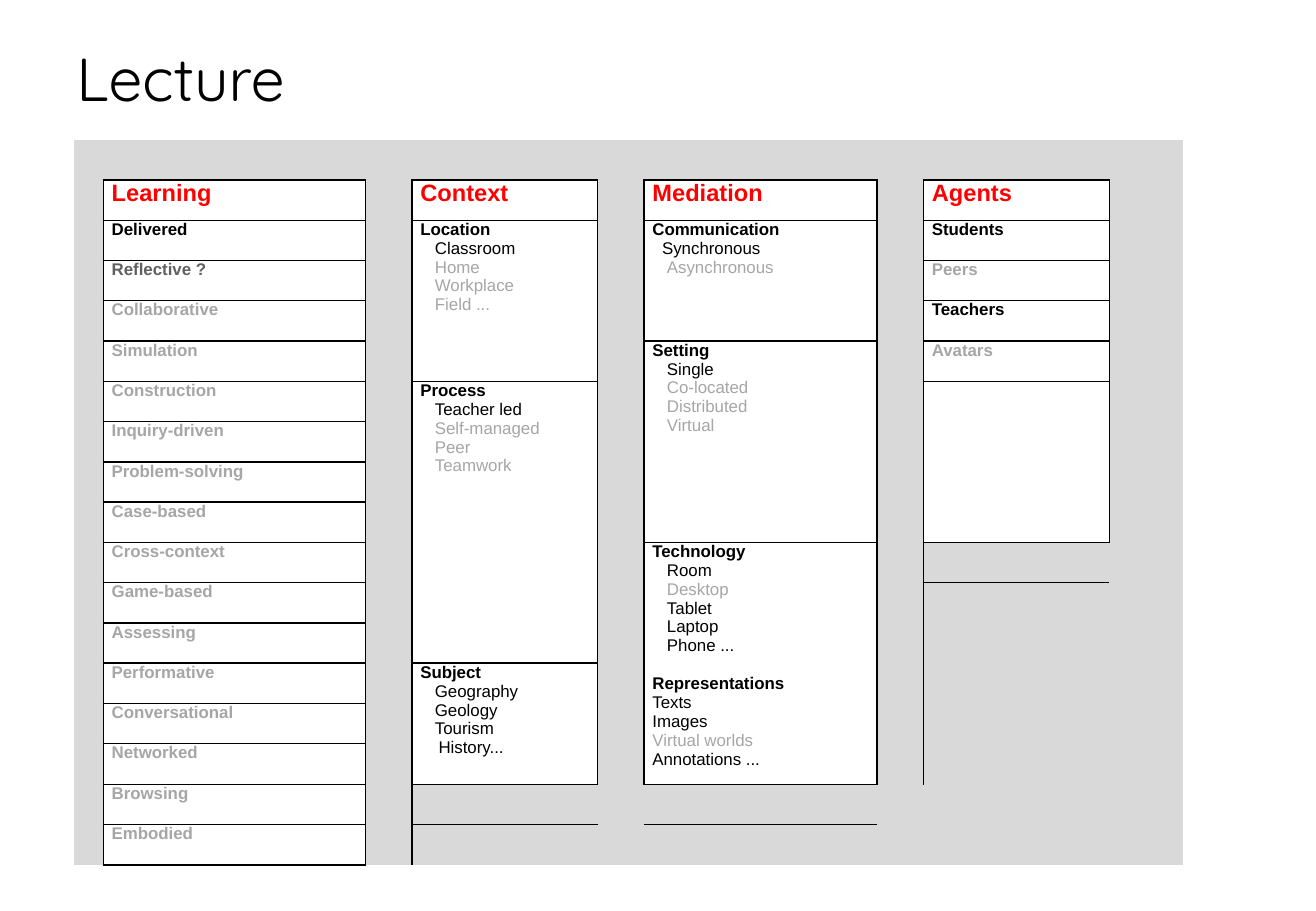
import collections

import lxml.etree
import pptx
import pptx.dml.color
import pptx.oxml.ns
import pptx.util

Inches = pptx.util.Inches
Pt = pptx.util.Pt
RGBColor = pptx.dml.color.RGBColor
qn = pptx.oxml.ns.qn

BLACK = RGBColor(0x00, 0x00, 0x00)
WHITE = RGBColor(0xFF, 0xFF, 0xFF)
RED = RGBColor(0xFF, 0x00, 0x00)
DARK_GREY = RGBColor(0x60, 0x60, 0x60)
FADED = RGBColor(0xA6, 0xA6, 0xA6)
PANEL = RGBColor(0xD9, 0xD9, 0xD9)

BODY_SIZE = 10
INDENT = 0.12
COLUMN_WIDTHS = [0.24, 2.16, 0.38, 1.53, 0.38, 1.92, 0.38, 1.53, 0.61]
ROW_COUNT = 18
SHORT_ROW = 15
SHORT_HEIGHT = 0.29
NO_STYLE = "{2D5ABB26-0587-4C30-8999-92F81FD0307C}"

Line = collections.namedtuple("Line", "text color bold indent size gap")


def heading(text, color=BLACK, size=BODY_SIZE, gap=0):
    return Line(text, color, True, 0, size, gap)


def item(text, color=BLACK, indent=INDENT):
    return Line(text, color, False, indent, BODY_SIZE, 0)


def items(color, *texts, indent=INDENT):
    return [item(text, color, indent) for text in texts]


def title_block(text):
    return 1, [heading(text, RED, 14)]


def singles(color, *texts):
    return [(1, [heading(text, color)]) for text in texts]


LEARNING = [
    title_block("Learning"),
    *singles(BLACK, "Delivered"),
    *singles(DARK_GREY, "Reflective ?"),
    *singles(FADED, "Collaborative", "Simulation", "Construction",
             "Inquiry-driven", "Problem-solving", "Case-based",
             "Cross-context", "Game-based", "Assessing", "Performative",
             "Conversational", "Networked", "Browsing", "Embodied"),
]
CONTEXT = [
    title_block("Context"),
    (4, [heading("Location"), item("Classroom"),
         *items(FADED, "Home", "Workplace", "Field ...")]),
    (7, [heading("Process"), item("Teacher led"),
         *items(FADED, "Self-managed", "Peer", "Teamwork")]),
    (3, [heading("Subject"),
         *items(BLACK, "Geography", "Geology", "Tourism"),
         item("History...", indent=0.15)]),
]
MEDIATION = [
    title_block("Mediation"),
    (3, [heading("Communication"), item("Synchronous", indent=0.08),
         item("Asynchronous", FADED)]),
    (5, [heading("Setting"), item("Single"),
         *items(FADED, "Co-located", "Distributed", "Virtual")]),
    (6, [heading("Technology"), item("Room"), item("Desktop", FADED),
         *items(BLACK, "Tablet", "Laptop", "Phone ..."),
         heading("Representations", gap=11.3),
         *items(BLACK, "Texts", "Images", indent=0),
         item("Virtual worlds", FADED, 0), item("Annotations ...", indent=0)]),
]
AGENTS = [
    title_block("Agents"),
    *singles(BLACK, "Students"),
    *singles(FADED, "Peers"),
    *singles(BLACK, "Teachers"),
    *singles(FADED, "Avatars"),
    (4, []),
]
COLUMNS = {1: LEARNING, 3: CONTEXT, 5: MEDIATION, 7: AGENTS}


def add_span(para, text, font_name, size, color, bold=False):
    span = para.add_run()
    span.text = text
    span.font.name = font_name
    span.font.size = Pt(size)
    span.font.bold = bold
    span.font.color.rgb = color


def write_lines(cell, lines):
    for index, line in enumerate(lines):
        frame = cell.text_frame
        para = frame.paragraphs[0] if index == 0 else frame.add_paragraph()
        if line.gap:
            para.space_before = Pt(line.gap)
        if line.indent:
            para._p.get_or_add_pPr().set("marL", str(Inches(line.indent)))
        add_span(para, line.text, "Arial", line.size, line.color, line.bold)


def fill_column(table, column, blocks, edges, white_cells):
    row = 1
    for height, lines in blocks:
        last = row + height - 1
        cell = table.cell(row, column)
        if height > 1:
            cell.merge(table.cell(last, column))
        write_lines(cell, lines)
        for inner in range(row, last + 1):
            white_cells.add((inner, column))
            edges[inner, column] |= {"lnL", "lnR"}
            edges[inner, column - 1].add("lnR")
            edges[inner, column + 1].add("lnL")
        edges[row, column].add("lnT")
        edges[row - 1, column].add("lnB")
        edges[last, column].add("lnB")
        if last + 1 < ROW_COUNT:
            edges[last + 1, column].add("lnT")
        row = last + 1


def style_cell(cell, sides, color):
    cell.margin_left = cell.margin_right = Inches(0.07)
    cell.margin_top = cell.margin_bottom = 0
    properties = cell._tc.get_or_add_tcPr()
    for side in ("lnL", "lnR", "lnT", "lnB"):
        if side in sides:
            border = lxml.etree.SubElement(properties, qn("a:" + side), w=str(Pt(1)))
            solid = lxml.etree.SubElement(border, qn("a:solidFill"))
            lxml.etree.SubElement(solid, qn("a:srgbClr"), val=str(BLACK))
    cell.fill.solid()
    cell.fill.fore_color.rgb = color
    if not cell.text_frame.text:
        para = cell.text_frame.paragraphs[0]._p
        lxml.etree.SubElement(para, qn("a:endParaRPr"), sz=str(BODY_SIZE * 100))


def add_title(page, left, top, width, height):
    box = page.shapes.add_textbox(left, top, width, height)
    box.text_frame.word_wrap = True
    add_span(box.text_frame.paragraphs[0], "Lecture", "Quicksand", 36, BLACK)


def add_pattern_table(page, left, top, width, height):
    shape = page.shapes.add_table(
        ROW_COUNT, len(COLUMN_WIDTHS), left, top, width, height)
    table = shape.table
    table.first_row = table.horz_banding = False
    table._tbl.tblPr.find(qn("a:tableStyleId")).text = NO_STYLE
    for column, share in zip(table.columns, COLUMN_WIDTHS):
        column.width = int(width * share / sum(COLUMN_WIDTHS))
    regular = int((height - Inches(SHORT_HEIGHT)) / (ROW_COUNT - 1))
    for index, row in enumerate(table.rows):
        row.height = Inches(SHORT_HEIGHT) if index == SHORT_ROW else regular

    edges = collections.defaultdict(set)
    white_cells = set()
    for column, blocks in COLUMNS.items():
        fill_column(table, column, blocks, edges, white_cells)
    for row in range(ROW_COUNT):
        for column in range(len(COLUMN_WIDTHS)):
            place = row, column
            color = WHITE if place in white_cells else PANEL
            style_cell(table.cell(row, column), edges[place], color)


def main():
    deck = pptx.Presentation()
    deck.slide_width = Inches(10.83)
    deck.slide_height = Inches(7.5)
    page = deck.slides.add_slide(deck.slide_layouts[6])
    add_title(page, Inches(0.53), Inches(0.29), Inches(9.13), Inches(0.87))
    add_pattern_table(page, Inches(0.61), Inches(1.15), Inches(9.13), Inches(5.93))
    deck.save("out.pptx")


if __name__ == "__main__":
    main()
